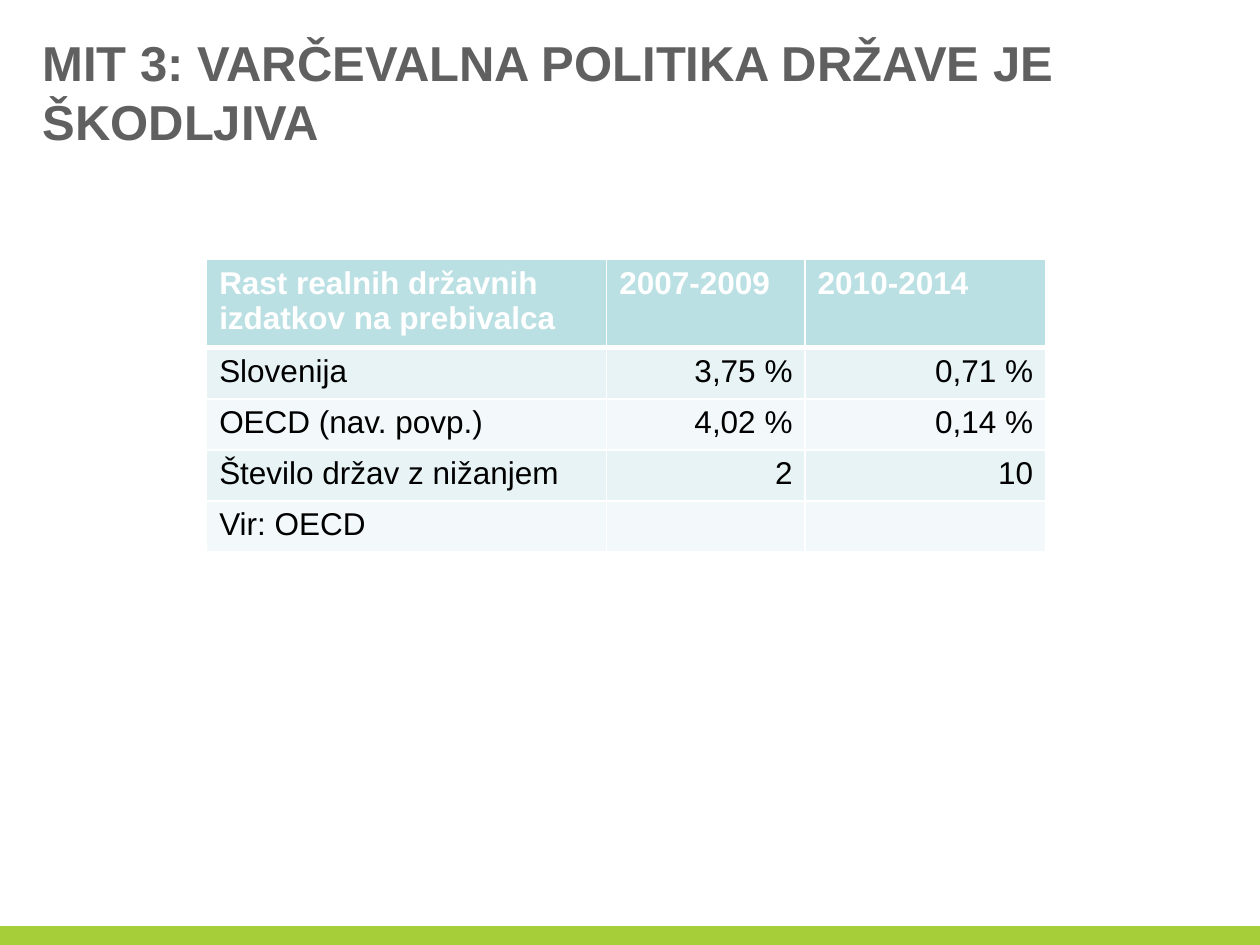
import pptx
import pptx.util
import pptx.dml.color
import pptx.enum.shapes
import pptx.enum.text
import pptx.oxml
from dataclasses import dataclass

Pt = pptx.util.Pt
Color = pptx.dml.color.RGBColor.from_string
Align = pptx.enum.text.PP_ALIGN


@dataclass(frozen=True)
class Theme:
    font: str = "Arial"
    title_size: int = 28
    table_size: int = 18
    title: str = "606060"
    accent: str = "A6CE39"
    header: str = "BBE0E3"
    bands: tuple = ("E7F3F4", "F3F9FA")
    white: str = "FFFFFF"
    text: str = "000000"


theme = Theme()


def style_runs(paragraph, size, color, bold):
    for run in paragraph.runs:
        run.font.name = theme.font
        run.font.size = Pt(size)
        run.font.bold = bold
        run.font.color.rgb = Color(color)


def add_borders(cell, widths):
    properties = cell._tc.get_or_add_tcPr()
    for index, (side, width) in enumerate(widths.items()):
        border = pptx.oxml.parse_xml(
            f'<a:{side} xmlns:a="http://schemas.openxmlformats.org/drawingml/2006/main" '
            f'w="{Pt(width)}"><a:solidFill><a:srgbClr val="{theme.white}"/>'
            f'</a:solidFill></a:{side}>')
        properties.insert(index, border)


presentation = pptx.Presentation()
presentation.slide_width, presentation.slide_height = Pt(720), Pt(540)
slide = presentation.slides.add_slide(presentation.slide_layouts[6])

# Bottom band
band = slide.shapes.add_shape(
    pptx.enum.shapes.MSO_SHAPE.RECTANGLE, Pt(0), Pt(529.2), Pt(720), Pt(10.8))
band.shadow.inherit = False
band.fill.solid()
band.fill.fore_color.rgb = Color(theme.accent)
band.line.fill.background()

# Title
title_box = slide.shapes.add_textbox(Pt(17.28), Pt(15), Pt(680.4), Pt(72))
title_frame = title_box.text_frame
title_frame.word_wrap = True
title_frame.text = "MIT 3: VARČEVALNA POLITIKA DRŽAVE JE ŠKODLJIVA"
style_runs(title_frame.paragraphs[0], theme.title_size, theme.title, True)

# Spending growth table
rows = [
    ("Rast realnih državnih izdatkov na prebivalca", "2007-2009", "2010-2014"),
    ("Slovenija", "3,75 %", "0,71 %"),
    ("OECD (nav. povp.)", "4,02 %", "0,14 %"),
    ("Število držav z nižanjem", "2", "10"),
    ("Vir: OECD", "", ""),
]
column_widths = (228.6, 113.4, 137.5)
header_height, row_height = 46.8, 29.2

table = slide.shapes.add_table(
    len(rows), len(column_widths), Pt(118.08), Pt(148.32), Pt(sum(column_widths)),
    Pt(header_height + row_height * (len(rows) - 1))).table
for column, width in zip(table.columns, column_widths):
    column.width = Pt(width)

for row_index, values in enumerate(rows):
    is_header = row_index == 0
    table.rows[row_index].height = Pt(header_height if is_header else row_height)
    fill = theme.header if is_header else theme.bands[(row_index - 1) % 2]
    for column_index, value in enumerate(values):
        cell = table.cell(row_index, column_index)
        cell.fill.solid()
        cell.fill.fore_color.rgb = Color(fill)
        add_borders(cell, {"lnL": 1, "lnR": 1, "lnT": 3 if row_index == 1 else 1,
                           "lnB": 3 if is_header else 1})
        if value:
            cell.text_frame.text = value
            paragraph = cell.text_frame.paragraphs[0]
            is_number = not is_header and column_index > 0
            paragraph.alignment = Align.RIGHT if is_number else Align.LEFT
            style_runs(paragraph, theme.table_size,
                       theme.white if is_header else theme.text, is_header)

presentation.save("out.pptx")
